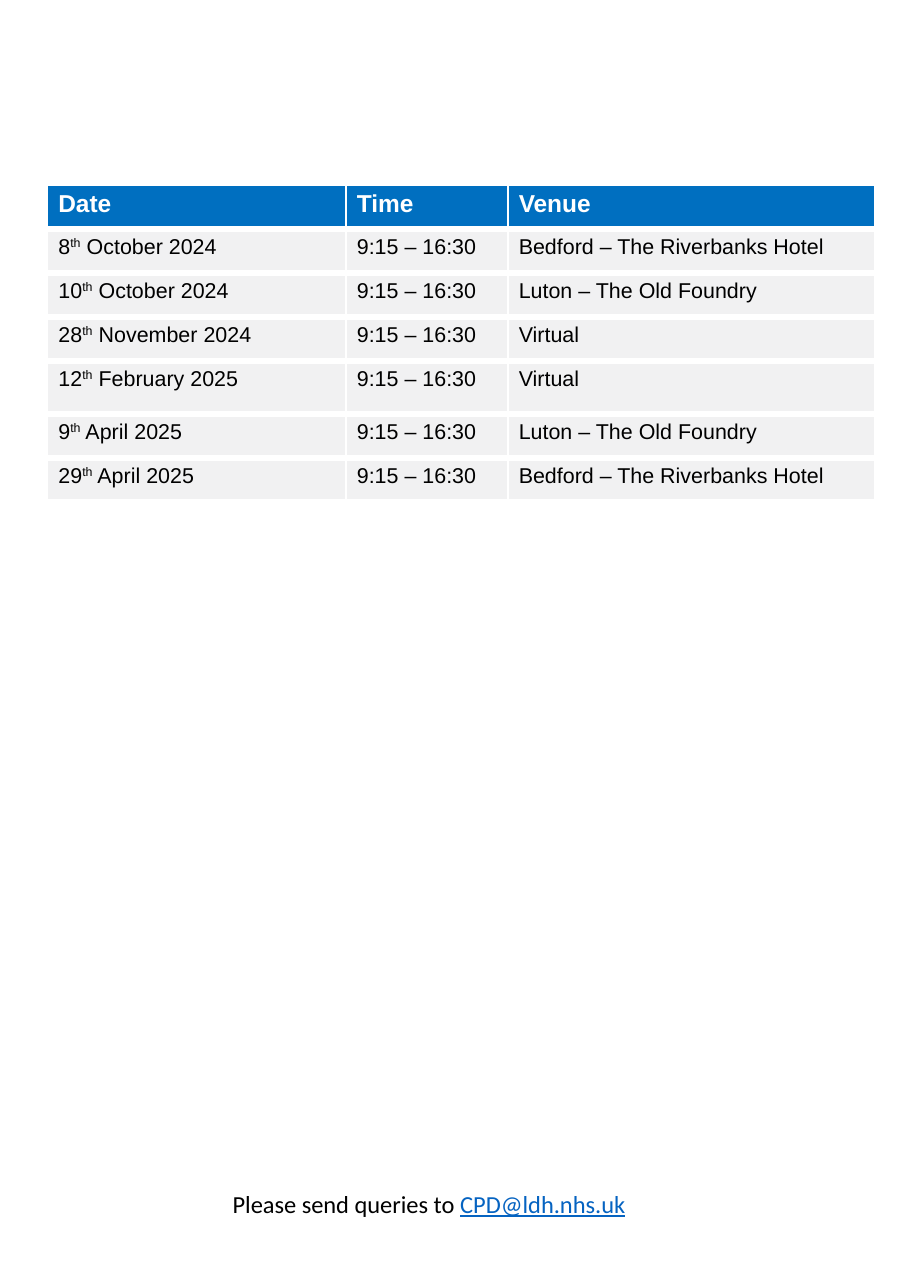
import pptx
import pptx.dml.color
import pptx.enum.text
import pptx.oxml
import pptx.oxml.ns
import pptx.util

Inches = pptx.util.Inches
Pt = pptx.util.Pt
RGB = pptx.dml.color.RGBColor.from_string

HEADERS = ["Date", "Time", "Venue"]
TIME = "9:15 – 16:30"
BEDFORD = "Bedford – The Riverbanks Hotel"
LUTON = "Luton – The Old Foundry"
SESSIONS = [
    ("8", "October 2024", BEDFORD),
    ("10", "October 2024", LUTON),
    ("28", "November 2024", "Virtual"),
    ("12", "February 2025", "Virtual"),
    ("9", "April 2025", LUTON),
    ("29", "April 2025", BEDFORD),
]
QUERY_TEXT = "Please send queries to "
QUERY_EMAIL = "CPD@ldh.nhs.uk"

COLUMN_WIDTHS = [2.71, 1.47, 3.33]
ROW_HEIGHT = 0.4
TALL_ROW, TALL_HEIGHT = 4, 0.48
TABLE_LEFT, TABLE_TOP = 0.43, 1.68

THEME = {
    "header_fill": "006FC0",
    "row_fill": "F1F1F2",
    "border": "FFFFFF",
    "header": {"name": "Arial", "size": Pt(16), "bold": True, "color": "FFFFFF"},
    "body": {"name": "Arial", "size": Pt(14), "bold": False, "color": "000000"},
    "query": {"name": "Calibri", "size": Pt(16), "color": "000000"},
    "email": {"name": "Calibri", "size": Pt(16), "color": "0563C1", "underline": True},
    "thin": 1.5,
    "thick": 4.5,
}
CELL_MARGINS = {"margin_left": 0.1, "margin_top": 0.05, "margin_right": 0, "margin_bottom": 0}


def add_run(p, text, style, superscript=False):
    r = p.add_run()
    r.text = text
    for key, value in style.items():
        if key == "color":
            r.font.color.rgb = RGB(value)
        else:
            setattr(r.font, key, value)
    if superscript:
        r._r.get_or_add_rPr().set("baseline", "30000")


def set_borders(cell, widths):
    tcPr = cell._tc.get_or_add_tcPr()
    ns = pptx.oxml.ns.nsdecls("a")
    for i, (side, width) in enumerate(widths.items()):
        line = pptx.oxml.parse_xml(
            f'<a:ln{side} {ns} w="{Pt(width)}"><a:solidFill>'
            f'<a:srgbClr val="{THEME["border"]}"/></a:solidFill></a:ln{side}>'
        )
        tcPr.insert(i, line)


def add_schedule(s):
    rows = [[[text] for text in HEADERS]]
    rows += [[[day, "th", f" {month}"], [TIME], [venue]] for day, month, venue in SESSIONS]
    heights = [TALL_HEIGHT if i == TALL_ROW else ROW_HEIGHT for i in range(len(rows))]
    frame = s.shapes.add_table(
        len(rows), len(HEADERS), Inches(TABLE_LEFT), Inches(TABLE_TOP),
        Inches(sum(COLUMN_WIDTHS)), Inches(sum(heights)),
    )
    table = frame.table
    table.horz_banding = False
    for column, width in zip(table.columns, COLUMN_WIDTHS):
        column.width = Inches(width)
    for i, row in enumerate(rows):
        table.rows[i].height = Inches(heights[i])
        is_header = i == 0
        style = THEME["header" if is_header else "body"]
        for j, parts in enumerate(row):
            cell = table.cell(i, j)
            for key, value in CELL_MARGINS.items():
                setattr(cell, key, Inches(value))
            cell.fill.solid()
            cell.fill.fore_color.rgb = RGB(THEME["header_fill" if is_header else "row_fill"])
            top = THEME["thin" if is_header else "thick"]
            set_borders(cell, {"L": THEME["thin"], "R": THEME["thin"], "T": top, "B": THEME["thick"]})
            for part in parts:
                add_run(cell.text_frame.paragraphs[0], part, style, part == "th")


def add_query_line(s):
    sp = s.shapes.add_textbox(Inches(0.38), Inches(10.74), Inches(7.03), Inches(0.37))
    tf = sp.text_frame
    tf.word_wrap = True
    p = tf.paragraphs[0]
    p.alignment = pptx.enum.text.PP_ALIGN.CENTER
    add_run(p, QUERY_TEXT, THEME["query"])
    add_run(p, QUERY_EMAIL, THEME["email"])


def main():
    prs = pptx.Presentation()
    prs.slide_width, prs.slide_height = Inches(8.27), Inches(11.69)
    s = prs.slides.add_slide(prs.slide_layouts[6])
    add_schedule(s)
    add_query_line(s)
    prs.save("out.pptx")


if __name__ == "__main__":
    main()
